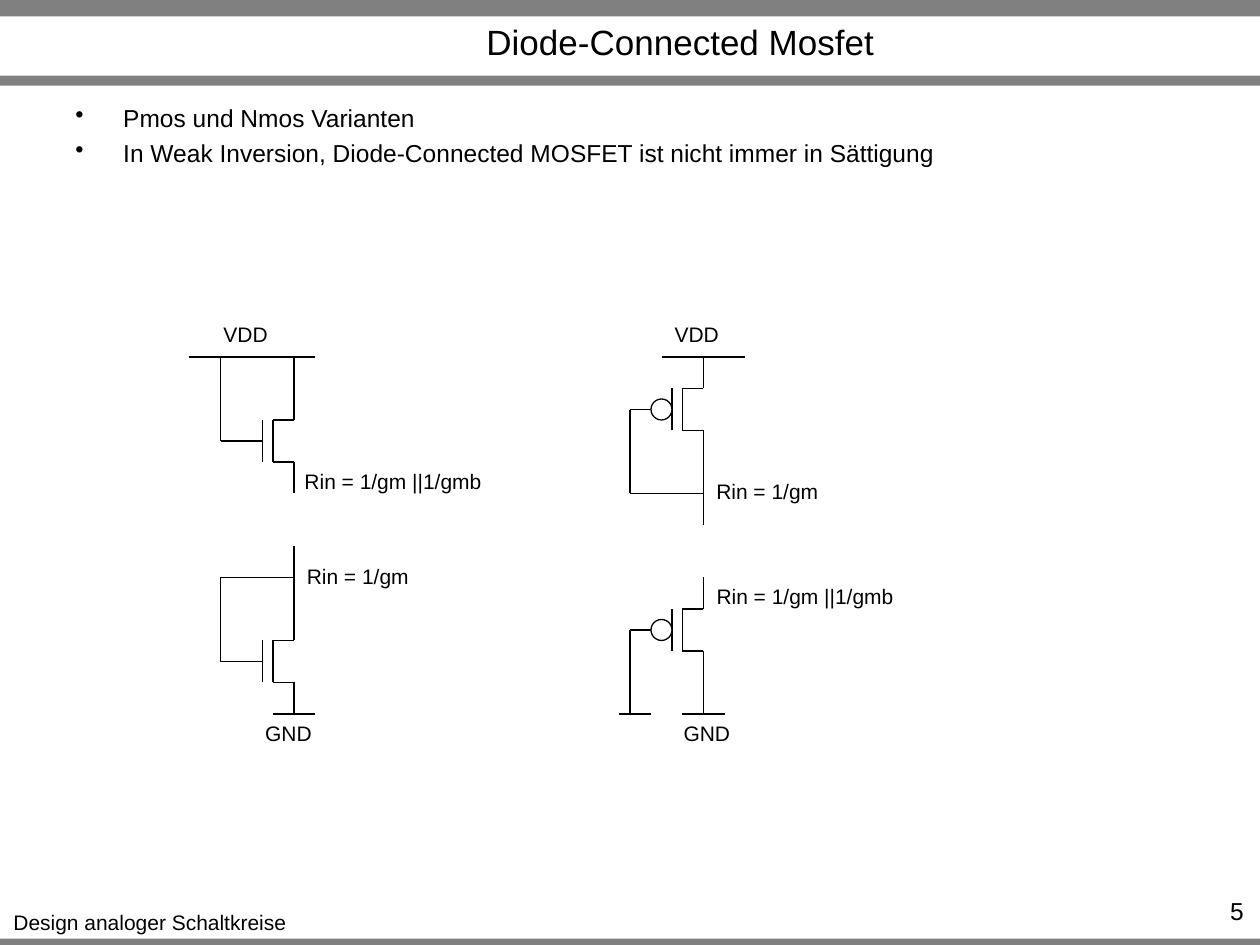
from lxml import etree
from pptx import Presentation
from pptx.dml.color import RGBColor
from pptx.enum.shapes import MSO_CONNECTOR, MSO_SHAPE
from pptx.enum.text import MSO_ANCHOR, PP_ALIGN
from pptx.oxml.ns import qn
from pptx.util import Inches, Pt

BLACK = RGBColor(0, 0, 0)
WHITE = RGBColor(255, 255, 255)
GRAY = RGBColor(128, 128, 128)
LEFT, MID, RIGHT = PP_ALIGN.LEFT, PP_ALIGN.CENTER, PP_ALIGN.RIGHT
TOP, MIDDLE = MSO_ANCHOR.TOP, MSO_ANCHOR.MIDDLE
LINE = MSO_CONNECTOR.STRAIGHT
RECT, OVAL = MSO_SHAPE.RECTANGLE, MSO_SHAPE.OVAL
FONT = "Arial"
WIDE, HIGH = 10, 7.5
GRID = 12  # circuit grid cells per inch

TITLE = "Diode-Connected Mosfet"
BULLETS = ["Pmos und Nmos Varianten",
           "In Weak Inversion, Diode-Connected MOSFET ist nicht immer in Sättigung"]
FOOTER = "Design analoger Schaltkreise"
PAGE = "5"
BARS = [(0, 0.13), (0.6, 0.08), (7.45, 0.05)]  # top, height

# Transistor lines in grid cells, seen from the gate pin
FET = [(7, 2, 5, 2), (5, 2, 5, -2), (2, 0, 4, 0), (4, 2, 4, -2),
       (7, -2, 5, -2), (7, -2, 7, -5), (7, 5, 7, 2), (2, 0, 0, 0)]

# Gate pin, p-type or not, wires seen from the gate pin
STAGES = [
    ((21, 63), False, [(7, -11, 7, -5), (0, 0, 0, -8), (0, -8, 7, -8), (5, 5, 9, 5)]),
    ((21, 42), False, [(7, -8, 7, -5), (0, 0, 0, -8), (-1, -8, 2, -8), (-3, -8, 9, -8)]),
    ((60, 39), True, [(7, 11, 7, 5), (0, 0, 0, 8), (0, 8, 7, 8), (3, -5, 11, -5)]),
    ((60, 60), True, [(7, 8, 7, 5), (0, 0, 0, 8), (-1, 8, 2, 8), (5, 8, 9, 8)]),
]

# Text, left, top, width
LABELS = [
    ("Rin = 1/gm ||1/gmb", 2.31, 3.67, 1.62),
    ("Rin = 1/gm", 2.33, 4.42, 1.02),
    ("Rin = 1/gm ||1/gmb", 5.58, 4.58, 1.62),
    ("Rin = 1/gm", 5.58, 3.75, 1.02),
    ("VDD", 1.67, 2.5, 0.56),
    ("VDD", 5.25, 2.5, 0.56),
    ("GND", 5.32, 5.67, 0.58),
    ("GND", 2, 5.67, 0.58),
    (FOOTER, 0, 7.17, 2.38),
]


def add_form(slide, kind, box, fill, edge=None):
    form = slide.shapes.add_shape(kind, *map(Inches, box))
    form.shadow.inherit = False
    form.fill.solid()
    form.fill.fore_color.rgb = fill
    if edge is None:
        form.line.fill.background()
    else:
        form.line.color.rgb = edge
        form.line.width = Pt(0.75)


def add_text(slide, lines, box, size, align, wrap=True, anchor=TOP, bullet=False):
    frame = slide.shapes.add_textbox(*map(Inches, box)).text_frame
    frame.word_wrap = wrap
    frame.vertical_anchor = anchor
    for i, line in enumerate(lines):
        para = frame.add_paragraph() if i else frame.paragraphs[0]
        para.alignment = align
        if i:
            para.space_before = Pt(3)
        if bullet:
            props = para._p.get_or_add_pPr()
            props.set("marL", str(Inches(0.38)))
            props.set("indent", str(Inches(-0.38)))
            etree.SubElement(props, qn("a:buChar")).set("char", "•")
        run = para.add_run()
        run.text = line
        run.font.name = FONT
        run.font.size = Pt(size)
        run.font.color.rgb = BLACK


def add_lines(shapes, gate, lines):
    """Draw lines given in grid cells relative to the gate pin."""
    x, y = gate
    for x1, y1, x2, y2 in lines:
        ends = [Inches(v / GRID) for v in (x + x1, y + y1, x + x2, y + y2)]
        wire = shapes.add_connector(LINE, *ends)
        wire.line.color.rgb = BLACK
        wire.line.width = Pt(0.75)
        etree.SubElement(wire._element.spPr, qn("a:effectLst"))


def main():
    deck = Presentation()
    deck.slide_width, deck.slide_height = Inches(WIDE), Inches(HIGH)
    slide = deck.slides.add_slide(deck.slide_layouts[6])

    for top, high in BARS:
        add_form(slide, RECT, (0, top, WIDE, high), GRAY)
    add_text(slide, [TITLE], (1.3, 0.14, 8.2, 0.38), 20, MID, anchor=MIDDLE)
    add_text(slide, BULLETS, (0.5, 0.77, 9, 0.91), 14, LEFT, bullet=True)
    add_text(slide, [PAGE], (9.1, 7.06, 0.87, 0.24), 14, RIGHT)

    for gate, ptype, wires in STAGES:
        add_lines(slide.shapes.add_group_shape().shapes, gate, FET)
        add_lines(slide.shapes, gate, wires)
        if ptype:
            x, y = gate
            ring = [v / GRID for v in (x + 2, y - 1, 2, 2)]
            add_form(slide, OVAL, ring, WHITE, BLACK)

    for text, left, top, wide in LABELS:
        add_text(slide, [text], (left, top, wide, 0.3), 12, MID, wrap=False)
    deck.save("out.pptx")


if __name__ == "__main__":
    main()
